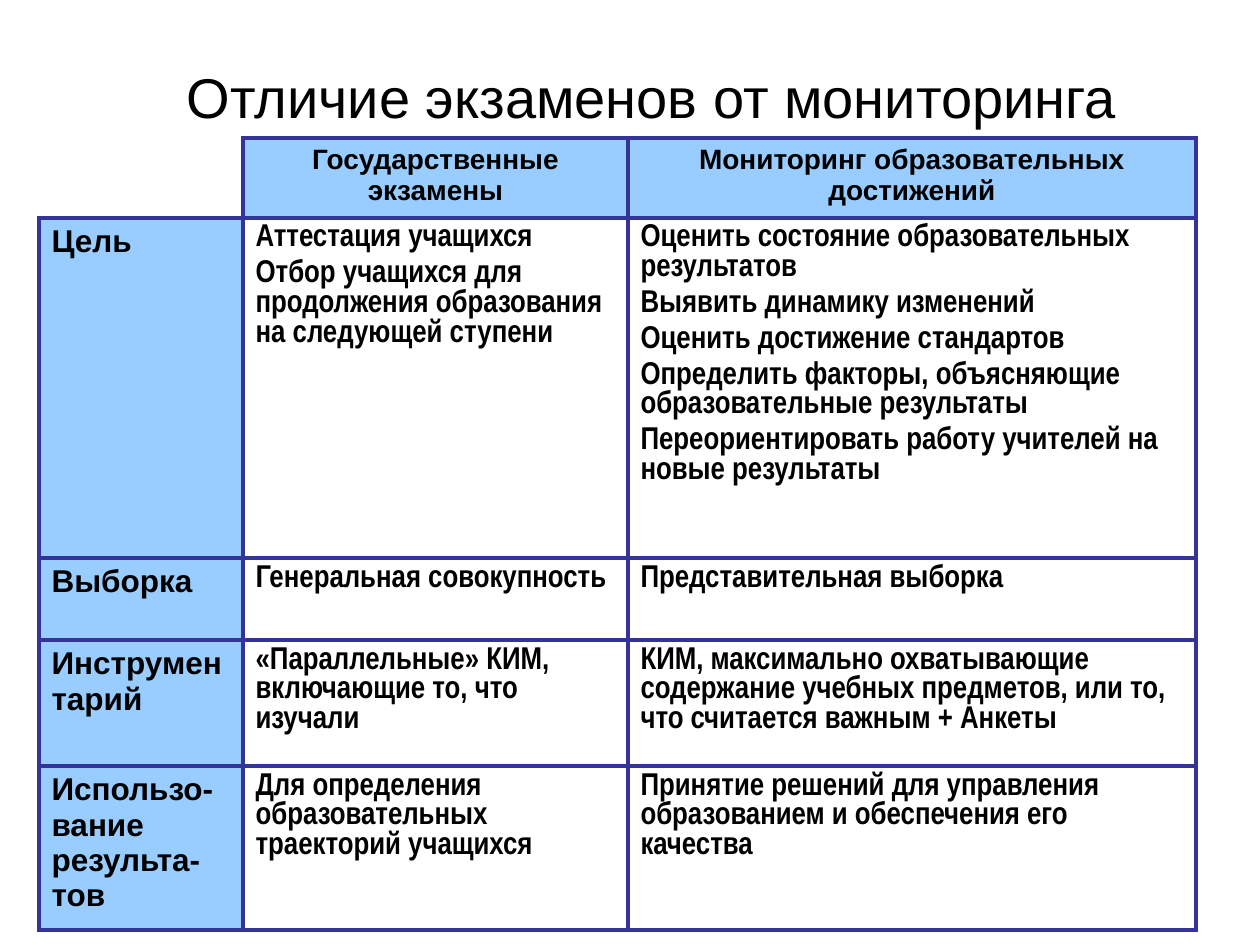
"""Build a slide with a table comparing state exams and monitoring."""
from lxml import etree
from pptx import Presentation
from pptx import util as u
from pptx.dml import color
from pptx.enum import text
from pptx.oxml import ns

PX = 914400 // 126
LABEL_FILL = "99CCFF"
BORDER = "333399"


def style(paragraph, font_name, size, bold):
    for run in paragraph.runs:
        run.font.name = font_name
        run.font.size = u.Pt(size)
        run.font.bold = bold
        run.font.color.rgb = color.RGBColor.from_string("000000")


def draw_borders(cell, sides):
    properties = cell._tc.get_or_add_tcPr()
    for position, side in enumerate(sides):
        line = etree.Element(ns.qn(f"a:ln{side}"), w=str(u.Pt(2.25)))
        fill = etree.SubElement(line, ns.qn("a:solidFill"))
        etree.SubElement(fill, ns.qn("a:srgbClr"), val=BORDER)
        properties.insert(position, line)


rows = [
    ["", "Государственные экзамены", "Мониторинг образовательных достижений"],
    ["Цель",
     "Аттестация учащихся\n"
     "Отбор учащихся для продолжения образования на следующей ступени",
     "Оценить состояние образовательных результатов\n"
     "Выявить динамику изменений\n"
     "Оценить достижение стандартов\n"
     "Определить факторы, объясняющие образовательные результаты\n"
     "Переориентировать работу учителей на новые результаты"],
    ["Выборка", "Генеральная совокупность", "Представительная выборка"],
    ["Инструментарий",
     "«Параллельные» КИМ, включающие то, что изучали",
     "КИМ, максимально охватывающие содержание учебных предметов, "
     "или то, что считается важным + Анкеты"],
    ["Использо-вание результа-тов",
     "Для определения образовательных траекторий учащихся",
     "Принятие решений для управления образованием и обеспечения его качества"],
]
column_widths = [204, 385, 568]
row_heights = [78, 336, 82, 122, 159]

deck = Presentation()
deck.slide_width, deck.slide_height = 1260 * PX, 945 * PX
slide = deck.slides.add_slide(deck.slide_layouts[6])

title = slide.shapes.add_textbox(44 * PX, 26 * PX, 1216 * PX, 141 * PX).text_frame
title.word_wrap = True
title.vertical_anchor = text.MSO_ANCHOR.MIDDLE
title.text = "Отличие экзаменов от мониторинга"
title.paragraphs[0].alignment = text.PP_ALIGN.CENTER
style(title.paragraphs[0], "Arial", 32, False)

comparison = slide.shapes.add_table(
    len(rows), len(column_widths), 39 * PX, 138 * PX,
    sum(column_widths) * PX, sum(row_heights) * PX).table
comparison.first_row = comparison.horz_banding = False
for column, width in zip(comparison.columns, column_widths):
    column.width = width * PX
for row, height in zip(comparison.rows, row_heights):
    row.height = height * PX

for r, entries in enumerate(rows):
    for c, entry in enumerate(entries):
        cell = comparison.cell(r, c)
        is_corner = r == c == 0
        is_label = (r == 0 or c == 0) and not is_corner
        if is_label:
            cell.fill.solid()
            cell.fill.fore_color.rgb = color.RGBColor.from_string(LABEL_FILL)
        else:
            cell.fill.background()
        draw_borders(cell, "RB" if is_corner else "LRTB")
        cell.text_frame.text = entry
        size = 16 if r == 0 else 18
        for index, paragraph in enumerate(cell.text_frame.paragraphs):
            paragraph.alignment = text.PP_ALIGN.CENTER if r == 0 else text.PP_ALIGN.LEFT
            paragraph.space_before = u.Pt(size * 0.2 if index else 0)
            style(paragraph, "Arial" if is_label else "Arial Narrow", size, True)

deck.save("out.pptx")
